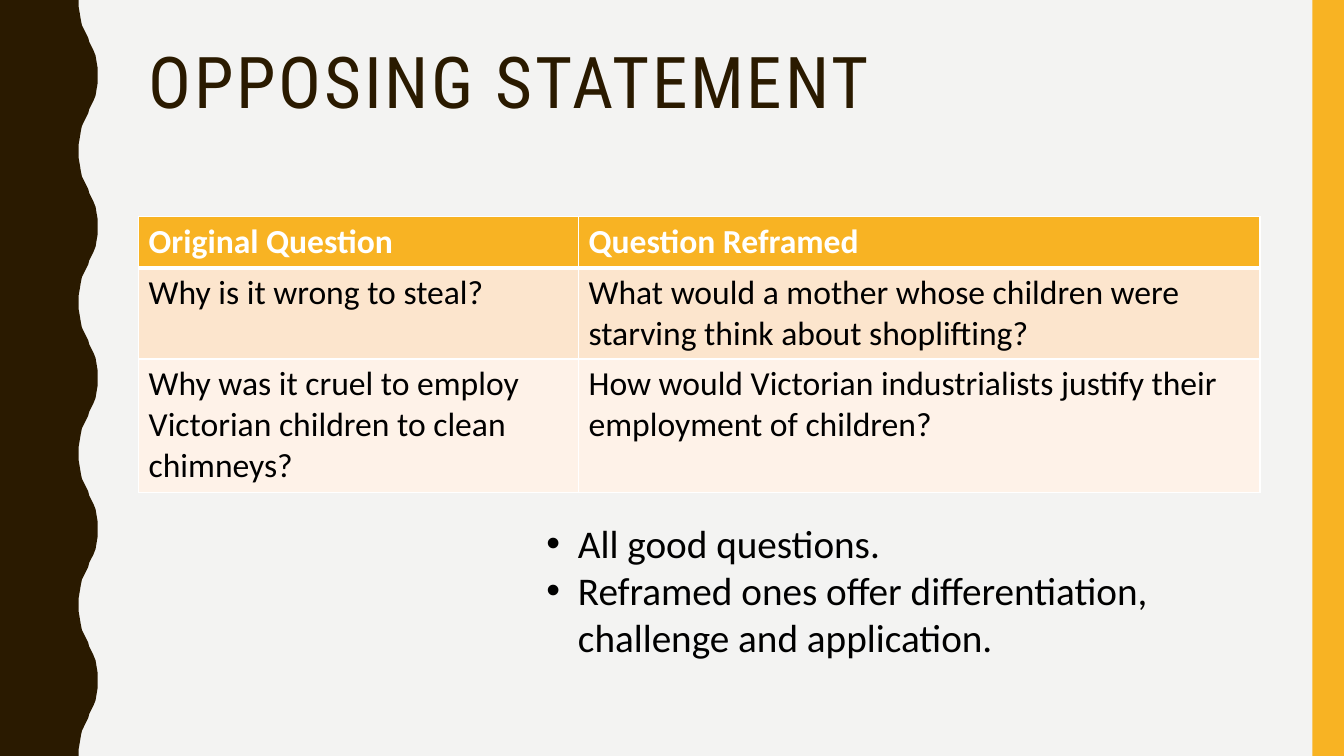
"""Builds the "Opposing statement" slide with a question table and two bullets."""
from lxml import etree
from pptx import Presentation
from pptx.dml.color import RGBColor
from pptx.enum.shapes import MSO_SHAPE
from pptx.enum.text import MSO_ANCHOR
from pptx.oxml.ns import qn
from pptx.util import Pt

PX = 9525
RECTANGLE = MSO_SHAPE.RECTANGLE
TOP = MSO_ANCHOR.TOP
BACKGROUND = RGBColor(0xF3, 0xF3, 0xF2)
BROWN = RGBColor(0x2A, 0x1A, 0x00)
AMBER = RGBColor(0xF8, 0xB3, 0x23)
PEACH = RGBColor(0xFC, 0xE5, 0xCD)
CREAM = RGBColor(0xFE, 0xF2, 0xE8)
WHITE = RGBColor(0xFF, 0xFF, 0xFF)
BLACK = RGBColor(0x00, 0x00, 0x00)


def add_span(para, text, size, color, name="Calibri", bold=False):
    span = para.add_run()
    span.text = text
    span.font.name = name
    span.font.size = Pt(size)
    span.font.bold = bold
    span.font.color.rgb = color
    return span


def add_text_box(page, left, top, width, height):
    box = page.shapes.add_textbox(left * PX, top * PX, width * PX, height * PX)
    box.text_frame.word_wrap = True
    box.text_frame.vertical_anchor = TOP
    return box.text_frame


deck = Presentation()
deck.slide_width = 1280 * PX
deck.slide_height = 720 * PX
page = deck.slides.add_slide(deck.slide_layouts[6])
page.background.fill.solid()
page.background.fill.fore_color.rgb = BACKGROUND

HALF_WAVE = 72
swell = [(75, 0), (75, 7), (76, 13), (77, 19), (78, 24), (80, 28), (82, 32), (84, 36),
         (85, 40), (87, 44), (89, 48), (91, 53), (92, 59), (93, 65), (93, 72)]
ebb = [(x, HALF_WAVE - y) for x, y in reversed(swell)]
edge = [(0, 0), (75, 0)]
for half in range(10):
    curve = ebb if half % 2 else swell
    edge += [(x, y + half * HALF_WAVE) for x, y in curve[1:]]
edge.append((0, 720))
outline = page.shapes.build_freeform(*edge[0], scale=PX)
outline.add_line_segments(edge[1:], close=True)
wave = outline.convert_to_shape()
stripe = page.shapes.add_shape(RECTANGLE, 1250 * PX, 0, 30 * PX, 720 * PX)
for band, color in ((wave, BROWN), (stripe, AMBER)):
    band.shadow.inherit = False
    band.fill.solid()
    band.fill.fore_color.rgb = color
    band.line.fill.background()

title = add_text_box(page, 132, 40, 1068, 156).paragraphs[0]
title.line_spacing = 0.9
heading = add_span(title, "OPPOSING STATEMENT", 51, BROWN, "Roboto Condensed")
heading._r.get_or_add_rPr().set("spc", "200")

questions = [
    ("Original Question", "Question Reframed"),
    ("Why is it wrong to steal?",
     "What would a mother whose children were starving think about shoplifting?"),
    ("Why was it cruel to employ Victorian children to clean chimneys?",
     "How would Victorian industrialists justify their employment of children?"),
]
column_widths = (419, 649)
row_heights = (49, 87, 127)
row_fills = (AMBER, PEACH, CREAM)
table = page.shapes.add_table(3, 2, 132 * PX, 206 * PX, sum(column_widths) * PX,
                              sum(row_heights) * PX).table
for column, width in zip(table.columns, column_widths):
    column.width = width * PX
for index, texts in enumerate(questions):
    table.rows[index].height = row_heights[index] * PX
    is_header = index == 0
    borders = {"lnL": 1, "lnR": 1, "lnT": 3 if index == 1 else 1, "lnB": 3 if is_header else 1}
    for column, text in enumerate(texts):
        cell = table.cell(index, column)
        add_span(cell.text_frame.paragraphs[0], text, 24,
                 WHITE if is_header else BLACK, bold=is_header)
        properties = cell._tc.get_or_add_tcPr()
        for side, points in borders.items():
            border = etree.SubElement(properties, qn(f"a:{side}"), w=str(Pt(points)))
            paint = etree.SubElement(border, qn("a:solidFill"))
            etree.SubElement(paint, qn("a:srgbClr"), val=str(WHITE))
        cell.fill.solid()
        cell.fill.fore_color.rgb = row_fills[index]

remarks = add_text_box(page, 511, 490, 634, 145)
for index, text in enumerate(("All good questions.",
                              "Reframed ones offer differentiation, challenge and application.")):
    para = remarks.add_paragraph() if index else remarks.paragraphs[0]
    settings = para._p.get_or_add_pPr()
    settings.set("marL", str(30 * PX))
    settings.set("indent", str(-30 * PX))
    etree.SubElement(settings, qn("a:buFont"), typeface="Arial")
    etree.SubElement(settings, qn("a:buChar"), char="•")
    add_span(para, text, 28, BLACK)

deck.save("out.pptx")
